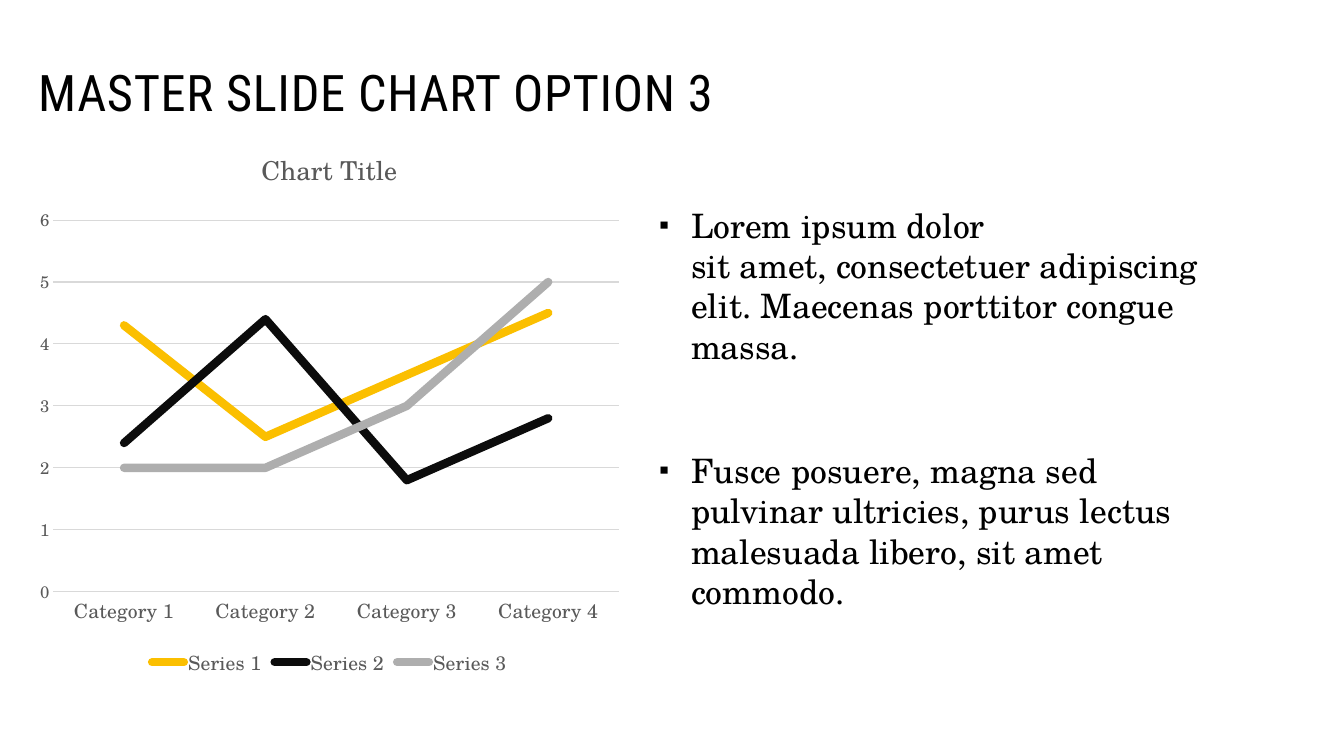
from copy import deepcopy

from lxml.etree import SubElement
from pptx import Presentation
from pptx.chart.data import CategoryChartData
from pptx.dml.color import RGBColor
from pptx.enum.chart import XL_CHART_TYPE, XL_LEGEND_POSITION, XL_MARKER_STYLE, XL_TICK_MARK
from pptx.enum.text import MSO_ANCHOR, MSO_AUTO_SIZE, PP_ALIGN
from pptx.oxml.ns import qn
from pptx.util import Emu, Pt

EMU_PER_PX = 914400 / 100.8
HEADING_FONT = "Roboto Condensed"
BODY_FONT = "TeX Gyre Schola"
BLACK = RGBColor(0x00, 0x00, 0x00)
GREY_TEXT = RGBColor(0x59, 0x59, 0x59)
GRID = RGBColor(0xD9, 0xD9, 0xD9)
YELLOW = RGBColor(0xFB, 0xBF, 0x00)
NEAR_BLACK = RGBColor(0x0C, 0x0C, 0x0C)
SILVER = RGBColor(0xAE, 0xAE, 0xAE)

CATEGORIES = [f"Category {number}" for number in range(1, 5)]
SERIES = [
    ("Series 1", (4.3, 2.5, 3.5, 4.5), YELLOW),
    ("Series 2", (2.4, 4.4, 1.8, 2.8), NEAR_BLACK),
    ("Series 3", (2, 2, 3, 5), SILVER),
]
POINTS = [
    "Lorem ipsum dolor\vsit amet, consectetuer adipiscing elit. Maecenas porttitor congue massa.",
    "Fusce posuere, magna sed pulvinar ultricies, purus lectus malesuada libero, sit amet commodo.",
]


def px(length):
    return Emu(round(length * EMU_PER_PX))


def format_font(font, size, color, name=BODY_FONT):
    font.name = name
    font.size = Pt(size)
    font.bold = False
    font.color.rgb = color


def write_text(para, text, *, size, color, name=BODY_FONT, line_spacing=1.0,
               space_before=0, letter_spacing=0):
    para.text = text
    para.alignment = PP_ALIGN.LEFT
    para.line_spacing = line_spacing
    para.space_before = Pt(space_before)
    para.space_after = Pt(0)
    for span in para.runs:
        format_font(span.font, size, color, name)
        if letter_spacing:
            span.font._element.set("spc", str(round(letter_spacing * 100)))
    for line_break in para._p.findall(qn("a:br")):
        line_break.append(deepcopy(para.runs[0].font._element))


def add_bullet(para, indent):
    properties = para._p.get_or_add_pPr()
    properties.set("marL", str(indent))
    properties.set("indent", str(-indent))
    color = SubElement(properties, qn("a:buClr"))
    SubElement(color, qn("a:srgbClr"), val=str(BLACK))
    SubElement(properties, qn("a:buSzPct"), val="85000")
    SubElement(properties, qn("a:buFont"), typeface="Arial")
    SubElement(properties, qn("a:buChar"), char="▪")


def place(box, left, top, width, height):
    box.left, box.top, box.width, box.height = map(px, (left, top, width, height))
    frame = box.text_frame
    frame.word_wrap = True
    frame.auto_size = MSO_AUTO_SIZE.NONE
    frame.vertical_anchor = MSO_ANCHOR.MIDDLE
    return frame


def fill_title(box):
    frame = place(box, 28, 47, 1275, 99)
    write_text(frame.paragraphs[0], "MASTER SLIDE CHART OPTION 3", size=36, color=BLACK,
               name=HEADING_FONT, line_spacing=0.85, letter_spacing=0.5)


def fill_list(box):
    frame = place(box, 649, 136, 600, 544)
    for index, text in enumerate(POINTS):
        para = frame.add_paragraph() if index else frame.paragraphs[0]
        write_text(para, text, size=24, color=BLACK, space_before=60 if index else 0)
        add_bullet(para, px(32))


def format_axis(axis, size):
    axis.major_tick_mark = XL_TICK_MARK.NONE
    axis.minor_tick_mark = XL_TICK_MARK.NONE
    format_font(axis.tick_labels.font, size, GREY_TEXT)


def format_line(line, color, width):
    line.color.rgb = color
    line.width = Pt(width)


def add_line_chart(slide):
    data = CategoryChartData()
    data.categories = CATEGORIES
    for name, values, _ in SERIES:
        data.add_series(name, values)
    chart = slide.shapes.add_chart(XL_CHART_TYPE.LINE, px(28), px(127), px(603), px(554), data).chart
    format_font(chart.font, 10, BLACK)

    chart.has_title = True
    title_para = chart.chart_title.text_frame.paragraphs[0]
    title_para.text = "Chart Title"
    format_font(title_para.runs[0].font, 18.6, GREY_TEXT)
    chart.chart_title.include_in_layout = False

    chart.has_legend = True
    chart.legend.position = XL_LEGEND_POSITION.BOTTOM
    chart.legend.include_in_layout = False
    format_font(chart.legend.font, 14, GREY_TEXT)

    format_axis(chart.category_axis, 14)
    format_line(chart.category_axis.format.line, GRID, 0.75)
    values_axis = chart.value_axis
    format_axis(values_axis, 12)
    values_axis.minimum_scale, values_axis.maximum_scale, values_axis.major_unit = 0, 6, 1
    values_axis.format.line.fill.background()
    format_line(values_axis.major_gridlines.format.line, GRID, 0.75)

    chart.plots[0].vary_by_categories = False
    for series, (_, _, color) in zip(chart.plots[0].series, SERIES):
        series.smooth = False
        series.marker.style = XL_MARKER_STYLE.NONE
        format_line(series.format.line, color, 6)
        outline = series._element.spPr.find(qn("a:ln"))
        outline.set("cap", "rnd")
        SubElement(outline, qn("a:round"))


def main():
    deck = Presentation()
    deck.slide_width, deck.slide_height = px(1344), px(756)
    page = deck.slides.add_slide(deck.slide_layouts[1])
    fill_title(page.shapes.title)
    add_line_chart(page)
    fill_list(page.placeholders[1])
    deck.save("out.pptx")


if __name__ == "__main__":
    main()
